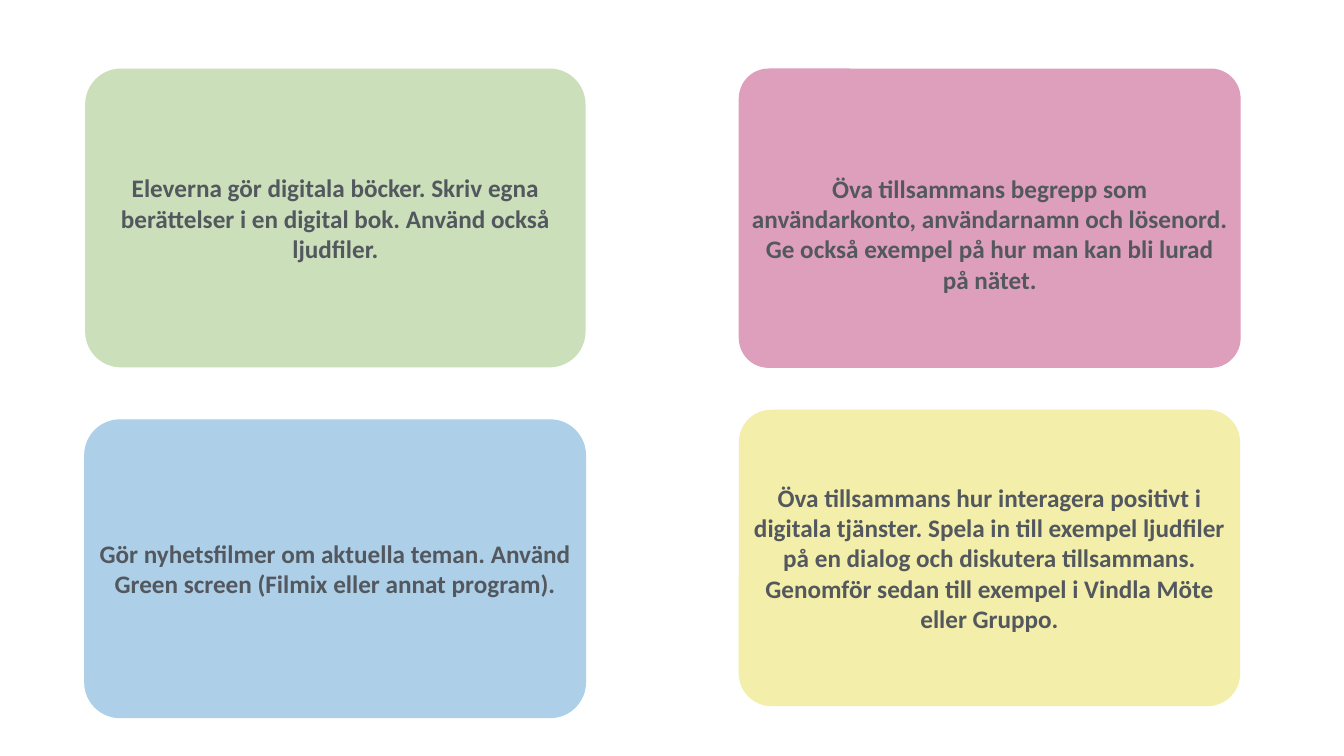
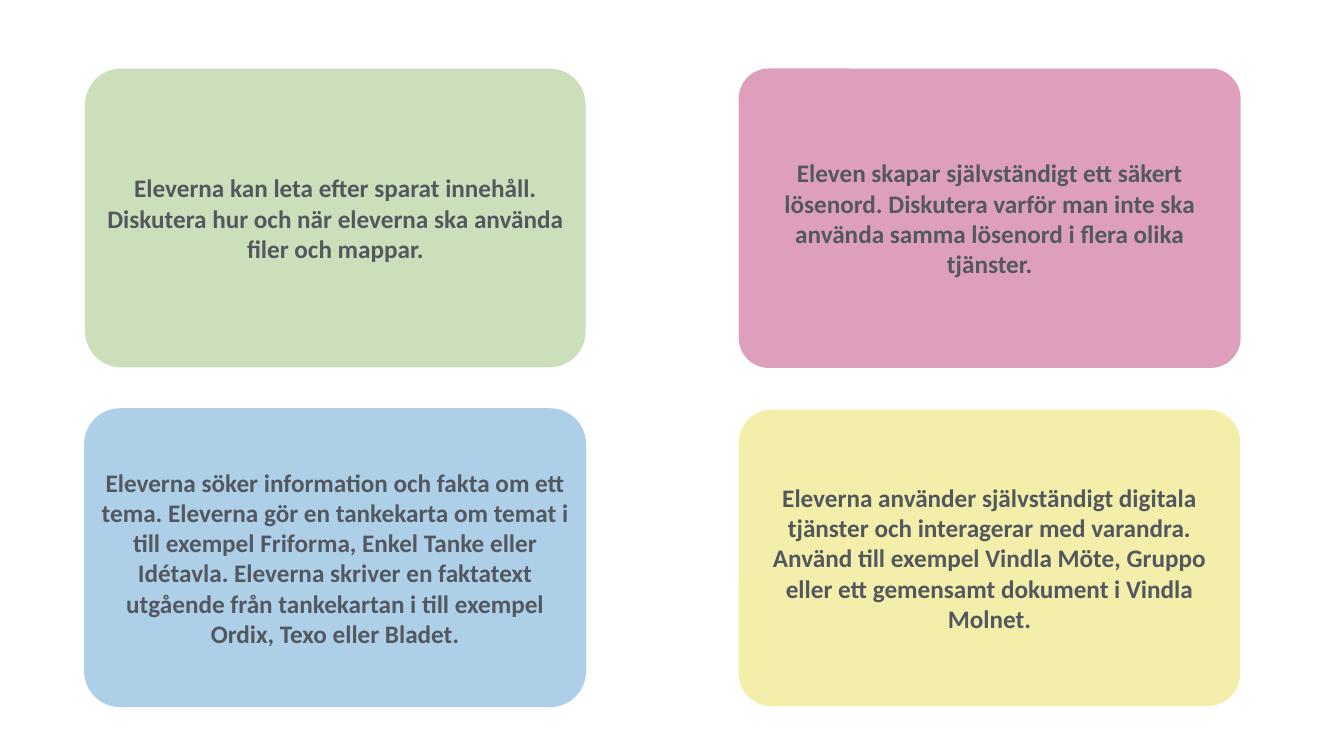
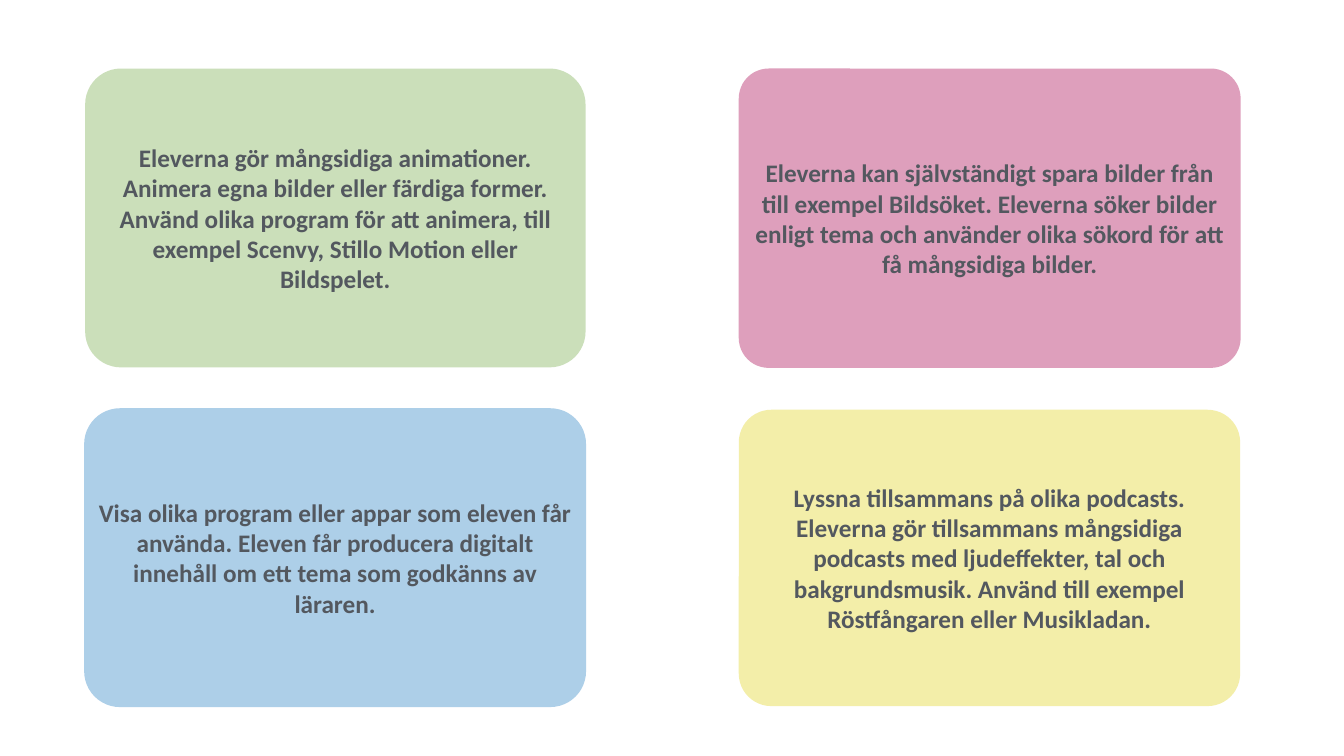
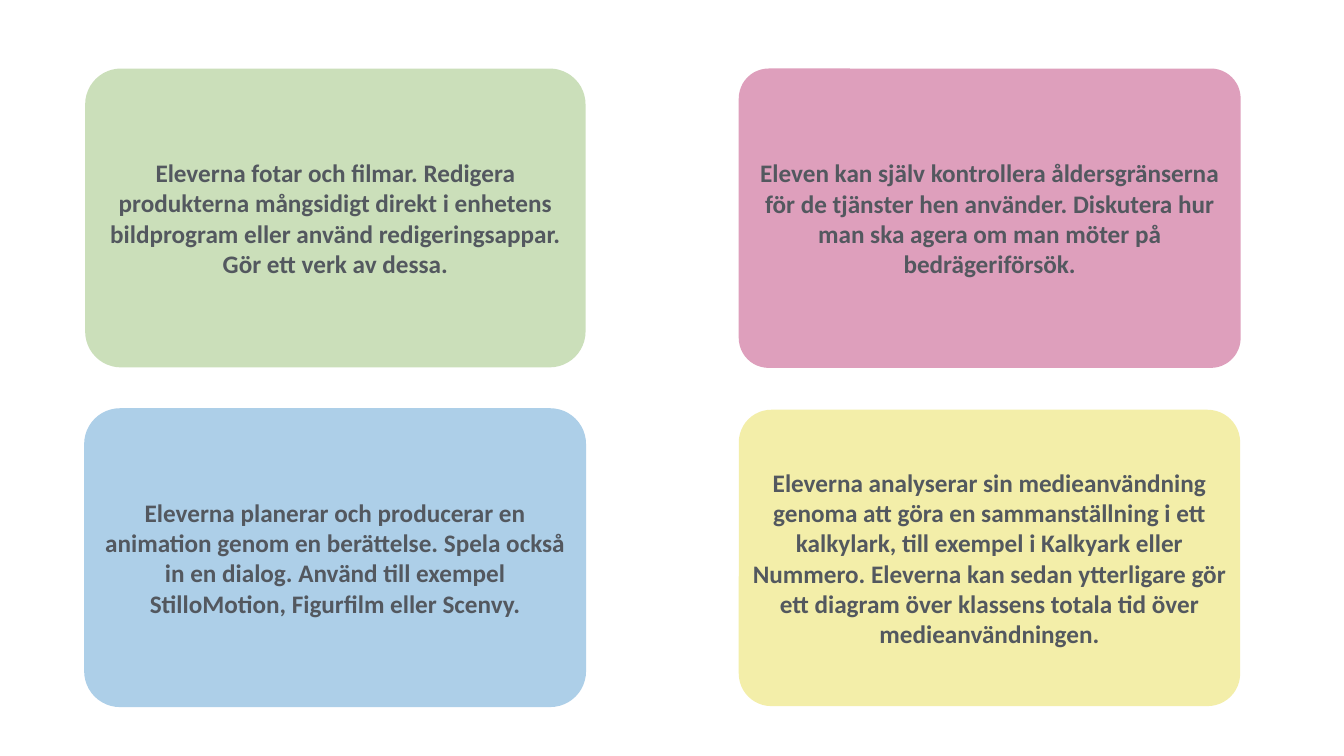
from pptx import Presentation
from pptx.dml.color import RGBColor
from pptx.enum.shapes import MSO_SHAPE
from pptx.enum.text import MSO_ANCHOR, PP_ALIGN
from pptx.util import Inches, Pt

GREEN = RGBColor(0xCB, 0xDF, 0xBA)
PINK = RGBColor(0xDE, 0x9F, 0xBC)
BLUE = RGBColor(0xAD, 0xCF, 0xE8)
YELLOW = RGBColor(0xF3, 0xEE, 0xA9)
GREY = RGBColor(0x53, 0x58, 0x5F)

FONT = "Calibri"
SIZE = 36
INSET = 0.06
LINE = 0.61

STYLES = [
    (GREEN, (1.69, 1.36, 9.93, 5.93), 0.12),
    (BLUE, (1.67, 8.1, 9.96, 5.93), 0.12),
    (YELLOW, (14.66, 8.13, 9.95, 5.88), 0.11),
    (PINK, (14.66, 1.36, 9.96, 5.94), 0.1),
]

DECK = [
    [
        "Eleverna gör digitala böcker. Skriv egna berättelser i en digital bok. "
        "Använd också ljudfiler.",
        "Gör nyhetsfilmer om aktuella teman. Använd Green screen "
        "(Filmix eller annat program).",
        "Öva tillsammans hur interagera positivt i digitala tjänster. Spela in till "
        "exempel ljudfiler på en dialog och diskutera tillsammans. Genomför sedan "
        "till exempel i Vindla Möte eller Gruppo.",
        "Öva tillsammans begrepp som användarkonto, användarnamn och lösenord. "
        "Ge också exempel på hur man kan bli lurad på nätet.",
    ],
    [
        "Eleverna kan leta efter sparat innehåll. Diskutera hur och när eleverna "
        "ska använda filer och mappar.",
        "Eleverna söker information och fakta om ett tema. Eleverna gör en tankekarta "
        "om temat i till exempel Friforma, Enkel Tanke eller Idétavla. Eleverna "
        "skriver en faktatext utgående från tankekartan i till exempel Ordix, "
        "Texo eller Bladet.",
        "Eleverna använder självständigt digitala tjänster och interagerar med "
        "varandra. Använd till exempel Vindla Möte, Gruppo eller ett gemensamt "
        "dokument i Vindla Molnet.",
        "Eleven skapar självständigt ett säkert lösenord. Diskutera varför man inte "
        "ska använda samma lösenord i flera olika tjänster.",
    ],
    [
        "Eleverna gör mångsidiga animationer. Animera egna bilder eller färdiga "
        "former. Använd olika program för att animera, till exempel Scenvy, "
        "Stillo Motion eller Bildspelet.",
        "Visa olika program eller appar som eleven får använda. Eleven får producera "
        "digitalt innehåll om ett tema som godkänns av läraren.",
        "Lyssna tillsammans på olika podcasts. Eleverna gör tillsammans mångsidiga "
        "podcasts med ljudeffekter, tal och bakgrundsmusik. Använd till exempel "
        "Röstfångaren eller Musikladan.",
        "Eleverna kan självständigt spara bilder från till exempel Bildsöket. "
        "Eleverna söker bilder enligt tema och använder olika sökord för att få "
        "mångsidiga bilder.",
    ],
    [
        "Eleverna fotar och filmar. Redigera produkterna mångsidigt direkt i enhetens "
        "bildprogram eller använd redigeringsappar. Gör ett verk av dessa.",
        "Eleverna planerar och producerar en animation genom en berättelse. Spela "
        "också in en dialog. Använd till exempel StilloMotion, Figurfilm eller Scenvy.",
        "Eleverna analyserar sin medieanvändning genoma att göra en sammanställning "
        "i ett kalkylark, till exempel i Kalkyark eller Nummero. Eleverna kan sedan "
        "ytterligare gör ett diagram över klassens totala tid över medieanvändningen.",
        "Eleven kan själv kontrollera åldersgränserna för de tjänster hen använder. "
        "Diskutera hur man ska agera om man möter på bedrägeriförsök.",
    ],
]


def add_card(slide, box, color, curve, text, drop=0):
    """Add a rounded card whose centred text is lowered by a top inset."""
    card = slide.shapes.add_shape(
        MSO_SHAPE.ROUNDED_RECTANGLE, *[Inches(value) for value in box]
    )
    card.shadow.inherit = False
    card.adjustments[0] = curve
    card.fill.solid()
    card.fill.fore_color.rgb = color
    card.line.fill.background()
    frame = card.text_frame
    frame.word_wrap = True
    frame.vertical_anchor = MSO_ANCHOR.MIDDLE
    frame.margin_left = frame.margin_right = frame.margin_bottom = Inches(INSET)
    frame.margin_top = Inches(INSET + drop)
    frame.text = text
    para = frame.paragraphs[0]
    para.alignment = PP_ALIGN.CENTER
    font = para.runs[0].font
    font.name = FONT
    font.size = Pt(SIZE)
    font.bold = True
    font.color.rgb = GREY


def add_cards(deck, texts, first):
    """Add a slide of four cards; the first slide has a lower blue card."""
    slide = deck.slides.add_slide(deck.slide_layouts[6])
    for (color, box, curve), text in zip(STYLES, texts):
        left, top, width, height = box
        if first and color == BLUE:
            top += 0.22
        drop = LINE if first and color == PINK else 0
        add_card(slide, (left, top, width, height), color, curve, text, drop)


def main():
    """Build and save the deck."""
    deck = Presentation()
    deck.slide_width = Inches(26.67)
    deck.slide_height = Inches(15)
    for index, texts in enumerate(DECK):
        add_cards(deck, texts, index == 0)
    deck.save("out.pptx")


if __name__ == "__main__":
    main()
